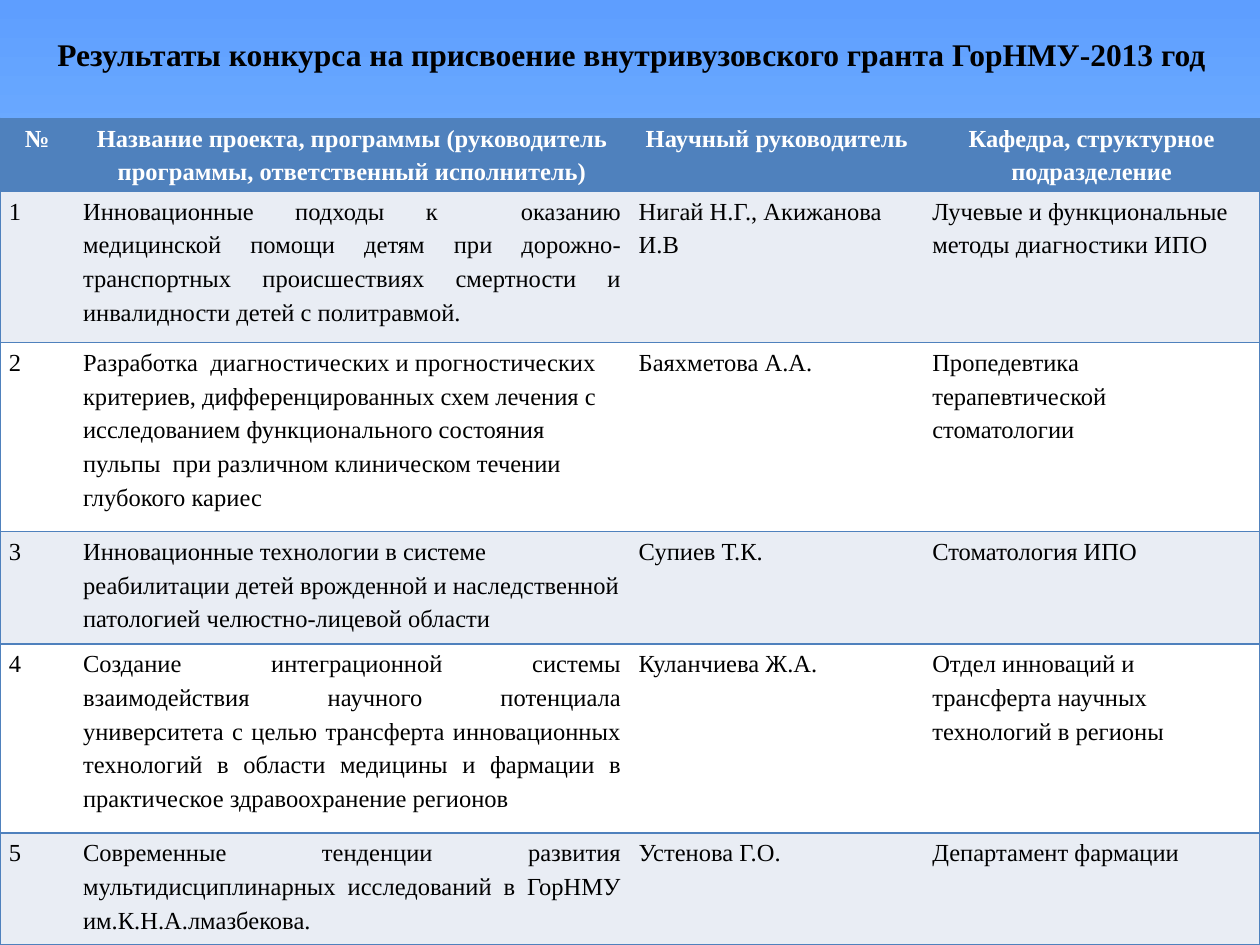
"""Build a slide listing the winners of a university grant contest."""
from dataclasses import dataclass

from lxml import etree
from pptx import Presentation
from pptx.dml.color import RGBColor
from pptx.enum.text import MSO_ANCHOR, MSO_AUTO_SIZE, PP_ALIGN
from pptx.oxml.ns import qn
from pptx.util import Inches, Pt

LEFT, CENTER, JUSTIFY = PP_ALIGN.LEFT, PP_ALIGN.CENTER, PP_ALIGN.JUSTIFY
MIDDLE = MSO_ANCHOR.MIDDLE
NO_AUTOFIT = MSO_AUTO_SIZE.NONE
TITLE_ONLY = 5
PLAIN_TABLE = "{2D5ABB26-0587-4C30-8999-92F81FD0307C}"


@dataclass(frozen=True)
class Theme:
    """Colours, font and type sizes of the slide."""
    font: str = "Times New Roman"
    title_size: int = 18
    table_size: int = 14
    text: str = "000000"
    header_text: str = "FFFFFF"
    accent: str = "4F81BD"
    bands: tuple = ("FFFFFF", "E9EDF4")
    background: tuple = ((0, "5E9EFF"), (40, "85C2FF"), (70, "C4D6EB"), (100, "FFEBFA"))


@dataclass(frozen=True)
class Grant:
    """One winning project."""
    project: str
    leader: str
    department: str
    height: float
    align: PP_ALIGN = LEFT


THEME = Theme()
TITLE = "Результаты конкурса на присвоение внутривузовского гранта ГорНМУ-2013 год"
COLUMN_WIDTHS = (0.59, 4.41, 2.33, 2.67)
HEADER_HEIGHT = 0.58
HEADERS = (
    "№",
    "Название проекта, программы (руководитель программы, ответственный исполнитель)",
    "Научный руководитель",
    "Кафедра, структурное подразделение",
)
GRANTS = (
    Grant("Инновационные подходы к  оказанию медицинской помощи детям при "
          "дорожно-транспортных происшествиях смертности и инвалидности детей с политравмой.",
          "Нигай Н.Г., Акижанова И.В", "Лучевые и функциональные методы диагностики ИПО",
          1.2, JUSTIFY),
    Grant("Разработка  диагностических и прогностических критериев, дифференцированных "
          "схем лечения с исследованием функционального состояния пульпы  при различном "
          "клиническом течении  глубокого кариес",
          "Баяхметова А.А.", "Пропедевтика терапевтической стоматологии", 1.5),
    Grant("Инновационные технологии в системе реабилитации детей врожденной и "
          "наследственной патологией челюстно-лицевой области",
          "Супиев Т.К.", "Стоматология ИПО", 0.89),
    Grant("Создание интеграционной системы взаимодействия научного потенциала "
          "университета с целью трансферта инновационных технологий в области медицины "
          "и фармации в практическое здравоохранение регионов",
          "Куланчиева Ж.А.", "Отдел инноваций и трансферта научных технологий в регионы",
          1.5, JUSTIFY),
    Grant("Современные тенденции развития мультидисциплинарных исследований в ГорНМУ "
          "им.К.Н.А.лмазбекова.",
          "Устенова Г.О.", "Департамент фармации", 0.89, JUSTIFY),
)


def add_run(p, text: str, size: int, color: str, bold: bool) -> None:
    """Add a formatted run to a paragraph."""
    r = p.add_run()
    r.text = text
    r.font.name, r.font.size, r.font.bold = THEME.font, Pt(size), bold
    r.font.color.rgb = RGBColor.from_string(color)


def add_solid_fill(parent, color: str) -> None:
    """Append a solid fill element."""
    fill = etree.SubElement(parent, qn("a:solidFill"))
    etree.SubElement(fill, qn("a:srgbClr"), val=color)


def set_background(s) -> None:
    """Give the slide its vertical gradient."""
    fill = s.background.fill
    fill.gradient()
    fill.gradient_angle = 270
    stops = next(s.element.iter(qn("a:gsLst")))
    for stop in list(stops):
        stops.remove(stop)
    for percent, color in THEME.background:
        stop = etree.SubElement(stops, qn("a:gs"), pos=str(percent * 1000))
        etree.SubElement(stop, qn("a:srgbClr"), val=color)


def add_title(s) -> None:
    """Fill and place the title placeholder."""
    sp = s.shapes.title
    sp.left, sp.top, sp.width, sp.height = map(Inches, (0.31, 0.23, 9.41, 0.4))
    tf = sp.text_frame
    tf.word_wrap, tf.auto_size, tf.vertical_anchor = False, NO_AUTOFIT, MIDDLE
    p = tf.paragraphs[0]
    p.alignment = CENTER
    add_run(p, TITLE, THEME.title_size, THEME.text, True)


def set_borders(cell, sides: str) -> None:
    """Draw one-point borders on the given sides, in schema order L, R, T, B."""
    props = cell._tc.get_or_add_tcPr()
    for i, side in enumerate(sides):
        line = etree.Element(qn(f"a:ln{side}"), w=str(Pt(1)))
        add_solid_fill(line, THEME.accent)
        props.insert(i, line)


def fill_cell(cell, text: str, row: int, col: int, align: PP_ALIGN) -> None:
    """Write and format one table cell."""
    header = row == 0
    cell.margin_left = cell.margin_right = Inches(0.07)
    cell.margin_top = cell.margin_bottom = 0
    cell.fill.solid()
    cell.fill.fore_color.rgb = RGBColor.from_string(
        THEME.accent if header else THEME.bands[row % 2])
    set_borders(cell, {0: "LTB", len(HEADERS) - 1: "RTB"}.get(col, "TB"))
    p = cell.text_frame.paragraphs[0]
    p.alignment, p.line_spacing = align, 1.25
    if col:
        p.space_before = p.space_after = Pt(3)
    elif not header:
        props = p._p.get_or_add_pPr()
        props.set("marL", str(Inches(0.38)))
        props.set("indent", str(-Inches(0.38)))
    add_run(p, text, THEME.table_size, THEME.header_text if header else THEME.text, header)


def add_grant_table(s) -> None:
    """Add the table of winning projects."""
    heights = (HEADER_HEIGHT, *(g.height for g in GRANTS))
    frame = s.shapes.add_table(len(heights), len(HEADERS), 0, Inches(0.94),
                               Inches(sum(COLUMN_WIDTHS)), Inches(sum(heights)))
    table = frame.table
    table.horz_banding = False
    next(table._tbl.iter(qn("a:tableStyleId"))).text = PLAIN_TABLE
    for column, width in zip(table.columns, COLUMN_WIDTHS):
        column.width = Inches(width)
    for row, height in zip(table.rows, heights):
        row.height = Inches(height)
    for col, text in enumerate(HEADERS):
        fill_cell(table.cell(0, col), text, 0, col, CENTER)
    for row, g in enumerate(GRANTS, 1):
        texts = (str(row), g.project, g.leader, g.department)
        aligns = (JUSTIFY, g.align, LEFT, LEFT)
        for col, (text, align) in enumerate(zip(texts, aligns)):
            fill_cell(table.cell(row, col), text, row, col, align)


def main() -> None:
    """Build and save the presentation."""
    prs = Presentation()
    prs.slide_width, prs.slide_height = Inches(10), Inches(7.5)
    s = prs.slides.add_slide(prs.slide_layouts[TITLE_ONLY])
    set_background(s)
    add_title(s)
    add_grant_table(s)
    prs.save("out.pptx")


if __name__ == "__main__":
    main()
